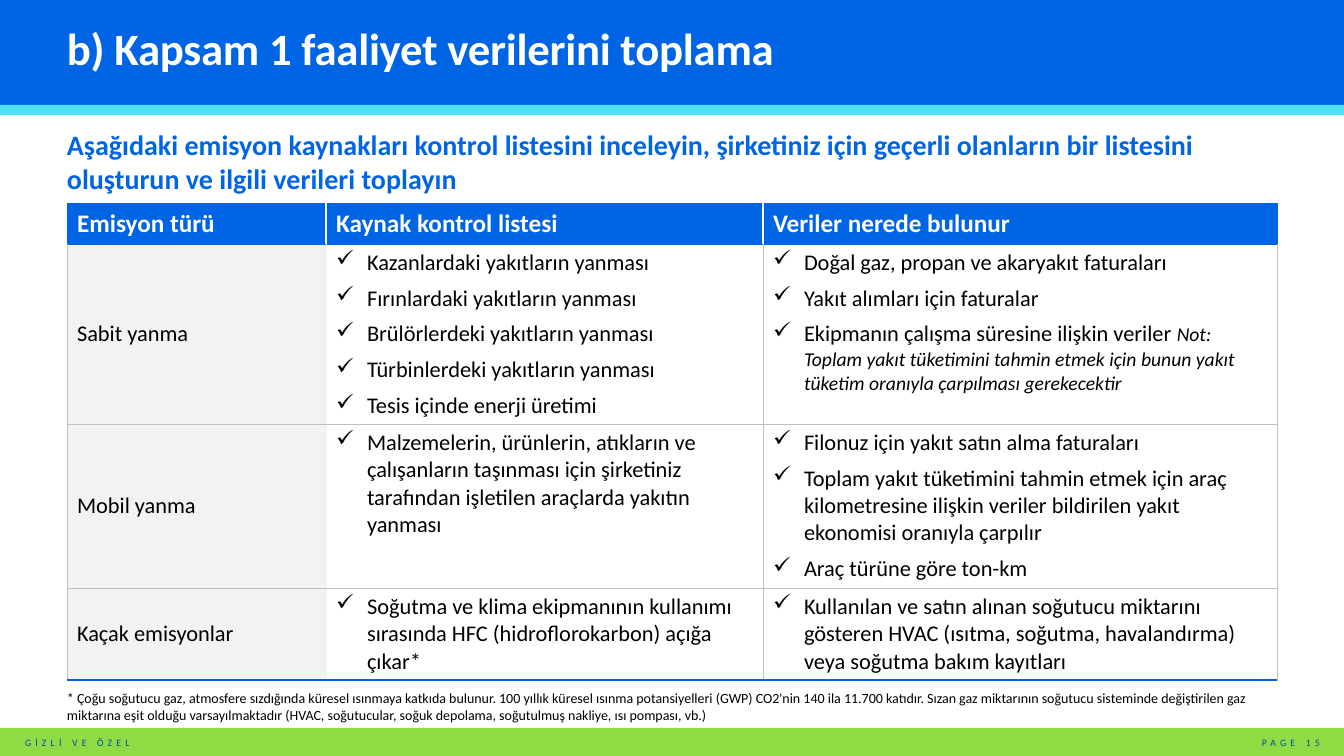
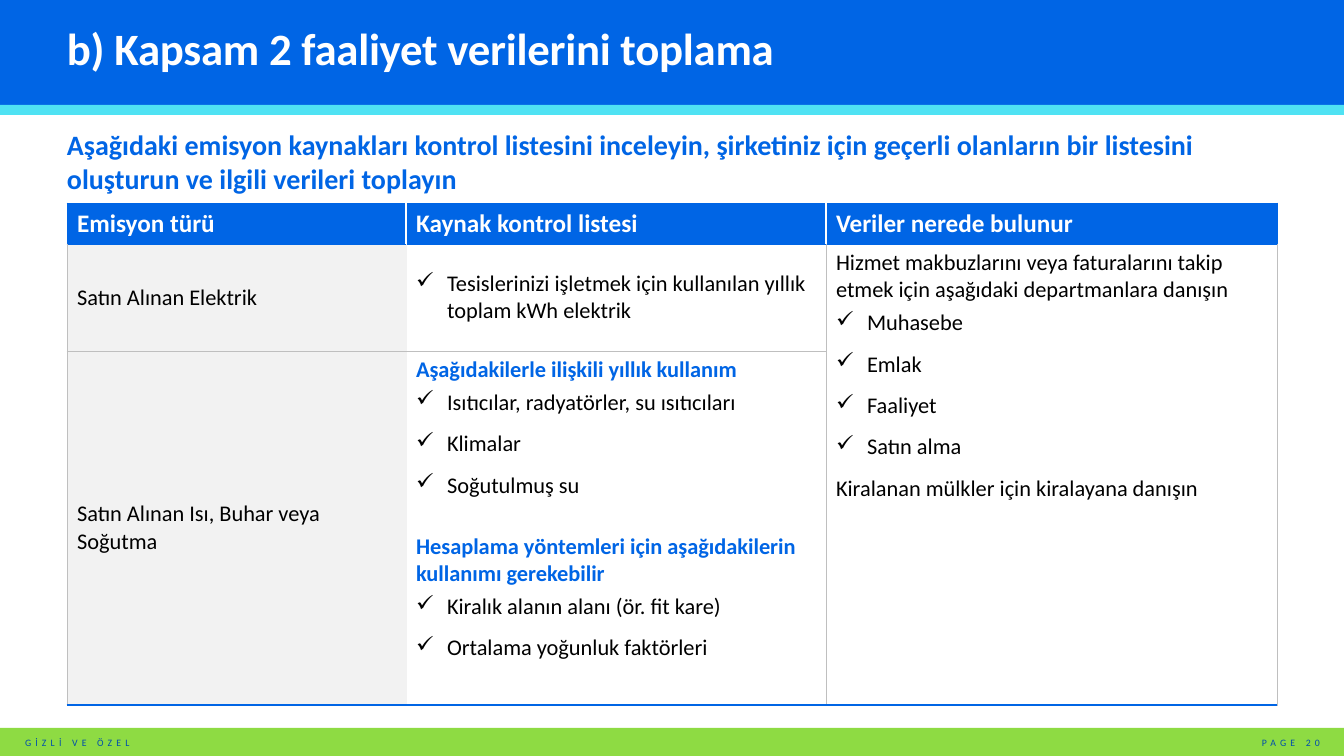
from dataclasses import dataclass, field

from lxml.etree import SubElement
from pptx import Presentation
from pptx.dml.color import RGBColor
from pptx.enum.shapes import MSO_SHAPE
from pptx.enum.text import MSO_ANCHOR, PP_ALIGN
from pptx.oxml import parse_xml
from pptx.oxml.ns import nsdecls, qn
from pptx.util import Pt

EMU_PER_PX = 914400 / 100.8
SLIDE_W, SLIDE_H = 1344, 756
MARGIN_X, CONTENT_W = 67, 1210
HEADER_H, STRIPE_H, FOOTER_H = 105, 10, 28
TABLE_TOP = 203
BULLET_INDENT = 31

BLUE = RGBColor(0x00, 0x65, 0xE5)
NAVY = RGBColor(0x00, 0x4C, 0xAC)
CYAN = RGBColor(0x4F, 0xE2, 0xF3)
GREEN = RGBColor(0x8E, 0xDB, 0x43)
WHITE = RGBColor(0xFF, 0xFF, 0xFF)
BLACK = RGBColor(0x00, 0x00, 0x00)
PALE_GREY = RGBColor(0xF2, 0xF2, 0xF2)
LINE_GREY = RGBColor(0xBF, 0xBF, 0xBF)

TITLE = {"size": Pt(32), "bold": True, "color": WHITE, "spacing": -20}
LEAD = {"size": Pt(20), "bold": True, "color": BLUE}
FOOTER = {"size": Pt(7), "color": NAVY, "spacing": 300}
FOOTNOTE = {"size": Pt(10), "color": BLACK}
HEADING = {"size": Pt(18), "bold": True, "color": WHITE}
BODY = {"size": Pt(16), "bold": False, "color": BLACK}
EMPHASIS = {"size": Pt(16), "bold": True, "color": BLUE}
ASIDE = {"size": Pt(14), "italic": True, "bold": False, "color": BLACK}

LEAD_TEXT = (
    "Aşağıdaki emisyon kaynakları kontrol listesini inceleyin, şirketiniz için geçerli "
    "olanların bir listesini oluşturun ve ilgili verileri toplayın"
)
FOOTNOTE_TEXT = (
    "* Çoğu soğutucu gaz, atmosfere sızdığında küresel ısınmaya katkıda bulunur. 100 yıllık "
    "küresel ısınma potansiyelleri (GWP) CO2'nin 140 ila 11.700 katıdır. Sızan gaz miktarının "
    "soğutucu sisteminde değiştirilen gaz miktarına eşit olduğu varsayılmaktadır (HVAC, "
    "soğutucular, soğuk depolama, soğutulmuş nakliye, ısı pompası, vb.)"
)
COLUMN_HEADINGS = ["Emisyon türü", "Kaynak kontrol listesi", "Veriler nerede bulunur"]


@dataclass
class Para:
    runs: list
    checked: bool = False
    layout: dict = field(default_factory=dict)


@dataclass
class Entry:
    paras: list
    anchor: MSO_ANCHOR = MSO_ANCHOR.TOP


def px(length):
    return round(length * EMU_PER_PX)


def set_all(target, values):
    for name, value in values.items():
        setattr(target, name, value)


def plain(text, style=BODY, **layout):
    return Para([(text, style)], layout=layout)


def check(text, aside=None, **layout):
    runs = [(text, BODY)] + ([(aside, ASIDE)] if aside else [])
    return Para(runs, True, layout)


def tight_checks(*texts):
    return [check(text, space_after=Pt(6)) for text in texts]


def loose_checks(*texts):
    return [check(text, space_before=Pt(4), space_after=Pt(6)) for text in texts]


def category(text):
    return Entry([plain(text)], MSO_ANCHOR.MIDDLE)


def add_run(paragraph, text, style):
    run = paragraph.add_run()
    run.text = text
    run.font.name = "Calibri"
    for name, value in style.items():
        if name == "color":
            run.font.color.rgb = value
        elif name == "spacing":
            run.font._element.set("spc", str(value))
        else:
            setattr(run.font, name, value)


def add_check_mark(paragraph):
    properties = paragraph._p.get_or_add_pPr()
    properties.set("marL", str(px(BULLET_INDENT)))
    properties.set("indent", str(-px(BULLET_INDENT)))
    SubElement(properties, qn("a:buChar")).set("char", "✓")


def write_paras(frame, paras):
    for index, para in enumerate(paras):
        paragraph = frame.add_paragraph() if index else frame.paragraphs[0]
        if para.checked:
            add_check_mark(paragraph)
        set_all(paragraph, para.layout)
        for text, style in para.runs:
            add_run(paragraph, text, style)


def add_text(slide, box, para, anchor=MSO_ANCHOR.MIDDLE, inset=(0, 0)):
    frame = slide.shapes.add_textbox(*map(px, box)).text_frame
    side, end = map(px, inset)
    set_all(frame, {
        "word_wrap": True, "vertical_anchor": anchor,
        "margin_left": side, "margin_right": side,
        "margin_top": end, "margin_bottom": end,
    })
    write_paras(frame, [para])


def add_band(slide, top, height, color):
    band = slide.shapes.add_shape(
        MSO_SHAPE.RECTANGLE, 0, px(top), px(SLIDE_W), px(height))
    band.shadow.inherit = False
    band.fill.solid()
    band.fill.fore_color.rgb = color
    band.line.fill.background()


def cell_borders(row, col, at_bottom, last_col):
    if row == 0:
        outer, inner = (BLUE, 0.5), (WHITE, 1)
        return {
            "L": inner if col else outer,
            "R": inner if col < last_col else outer,
            "T": outer,
            "B": outer,
        }
    grey, pale = (LINE_GREY, 0.5), (PALE_GREY, 0.5)
    return {
        "L": pale if col == 1 else grey,
        "R": grey if col else pale,
        "T": (BLUE, 0.5) if row == 1 else grey,
        "B": (BLUE, 1) if at_bottom else grey,
    }


def draw_borders(cell, borders):
    properties = cell._tc.get_or_add_tcPr()
    for index, (side, (color, width)) in enumerate(borders.items()):
        properties.insert(index, parse_xml(
            f'<a:ln{side} {nsdecls("a")} w="{Pt(width)}"><a:solidFill>'
            f'<a:srgbClr val="{color}"/></a:solidFill></a:ln{side}>'))


def add_checklist(slide, widths, heights, body, merge_sources):
    header = [Entry([plain(text, HEADING)], MSO_ANCHOR.MIDDLE) for text in COLUMN_HEADINGS]
    rows = [header] + body
    last_row, last_col = len(rows) - 1, len(widths) - 1
    table = slide.shapes.add_table(
        len(rows), len(widths), px(MARGIN_X), px(TABLE_TOP),
        px(CONTENT_W), px(sum(heights))).table
    table.horz_banding = False
    for column, width in zip(table.columns, widths):
        column.width = px(width)
    for row, height in zip(table.rows, heights):
        row.height = px(height)
    if merge_sources:
        table.cell(1, last_col).merge(table.cell(last_row, last_col))
    for row, entries in enumerate(rows):
        for col, entry in enumerate(entries):
            cell = table.cell(row, col)
            cell.fill.solid()
            cell.fill.fore_color.rgb = BLUE if row == 0 else WHITE if col else PALE_GREY
            at_bottom = row == last_row or cell.is_merge_origin
            borders = cell_borders(row, col, at_bottom, last_col)
            if cell.is_spanned:
                del borders["T"]
            draw_borders(cell, borders)
            if entry:
                cell.vertical_anchor = entry.anchor
                write_paras(cell.text_frame, entry.paras)


def add_page(deck, title, number):
    slide = deck.slides.add_slide(deck.slide_layouts[6])
    footer_top = SLIDE_H - FOOTER_H
    add_band(slide, 0, HEADER_H, BLUE)
    add_band(slide, footer_top, FOOTER_H, GREEN)
    add_band(slide, HEADER_H, STRIPE_H, CYAN)
    add_text(slide, (15, footer_top + 4, 632, 22), plain("GİZLİ VE ÖZEL", FOOTER),
             MSO_ANCHOR.TOP, (10, 5))
    add_text(slide, (1220, footer_top + 4, 110, 22),
             plain(f"PAGE {number}", FOOTER, alignment=PP_ALIGN.RIGHT),
             MSO_ANCHOR.TOP, (10, 5))
    add_text(slide, (MARGIN_X, 18, CONTENT_W, 68), plain(title, TITLE, line_spacing=0.85))
    add_text(slide, (MARGIN_X, 128, CONTENT_W, 66), plain(LEAD_TEXT, LEAD))
    return slide


def scope_1_rows():
    data_sources = tight_checks(
        "Doğal gaz, propan ve akaryakıt faturaları", "Yakıt alımları için faturalar")
    data_sources.append(check(
        "Ekipmanın çalışma süresine ilişkin veriler ",
        "Not: Toplam yakıt tüketimini tahmin etmek için bunun yakıt tüketim oranıyla "
        "çarpılması gerekecektir", space_after=Pt(6)))
    return [
        [category("Sabit yanma"),
         Entry(tight_checks(
             "Kazanlardaki yakıtların yanması", "Fırınlardaki yakıtların yanması",
             "Brülörlerdeki yakıtların yanması", "Türbinlerdeki yakıtların yanması",
             "Tesis içinde enerji üretimi")),
         Entry(data_sources)],
        [category("Mobil yanma"),
         Entry(tight_checks(
             "Malzemelerin, ürünlerin, atıkların ve çalışanların taşınması için şirketiniz "
             "tarafından işletilen araçlarda yakıtın yanması")),
         Entry(tight_checks(
             "Filonuz için yakıt satın alma faturaları",
             "Toplam yakıt tüketimini tahmin etmek için araç kilometresine ilişkin veriler "
             "bildirilen yakıt ekonomisi oranıyla çarpılır",
             "Araç türüne göre ton-km"))],
        [category("Kaçak emisyonlar"),
         Entry(tight_checks(
             "Soğutma ve klima ekipmanının kullanımı sırasında HFC (hidroflorokarbon) "
             "açığa çıkar*")),
         Entry(tight_checks(
             "Kullanılan ve satın alınan soğutucu miktarını gösteren HVAC (ısıtma, soğutma, "
             "havalandırma) veya soğutma bakım kayıtları"))],
    ]


def scope_2_rows():
    departments = [
        plain("Hizmet makbuzlarını veya faturalarını takip etmek için aşağıdaki "
              "departmanlara danışın"),
        *loose_checks("Muhasebe", "Emlak", "Faaliyet", "Satın alma"),
        plain("Kiralanan mülkler için kiralayana danışın",
              space_before=Pt(4), space_after=Pt(6)),
    ]
    heat_sources = [
        plain("Aşağıdakilerle ilişkili yıllık kullanım", EMPHASIS),
        *loose_checks("Isıtıcılar, radyatörler, su ısıtıcıları", "Klimalar", "Soğutulmuş su"),
        plain("Hesaplama yöntemleri için aşağıdakilerin kullanımı gerekebilir",
              EMPHASIS, space_before=Pt(18)),
        *loose_checks("Kiralık alanın alanı (ör. fit kare)", "Ortalama yoğunluk faktörleri"),
    ]
    return [
        [category("Satın Alınan Elektrik"),
         Entry([check("Tesislerinizi işletmek için kullanılan yıllık toplam kWh elektrik")],
               MSO_ANCHOR.MIDDLE),
         Entry(departments)],
        [category("Satın Alınan Isı, Buhar veya Soğutma"), Entry(heat_sources), None],
    ]


def main():
    deck = Presentation()
    set_all(deck, {"slide_width": px(SLIDE_W), "slide_height": px(SLIDE_H)})

    scope_1 = add_page(deck, "b) Kapsam 1 faaliyet verilerini toplama", 15)
    add_checklist(scope_1, (259, 437, 514), (41, 180, 164, 92), scope_1_rows(), False)
    add_text(scope_1, (MARGIN_X, 689, CONTENT_W, 34), plain(FOOTNOTE_TEXT, FOOTNOTE),
             MSO_ANCHOR.BOTTOM)

    scope_2 = add_page(deck, "b) Kapsam 2 faaliyet verilerini toplama", 20)
    add_checklist(scope_2, (339, 420, 451), (41, 107, 354), scope_2_rows(), True)

    deck.save("out.pptx")


if __name__ == "__main__":
    main()
